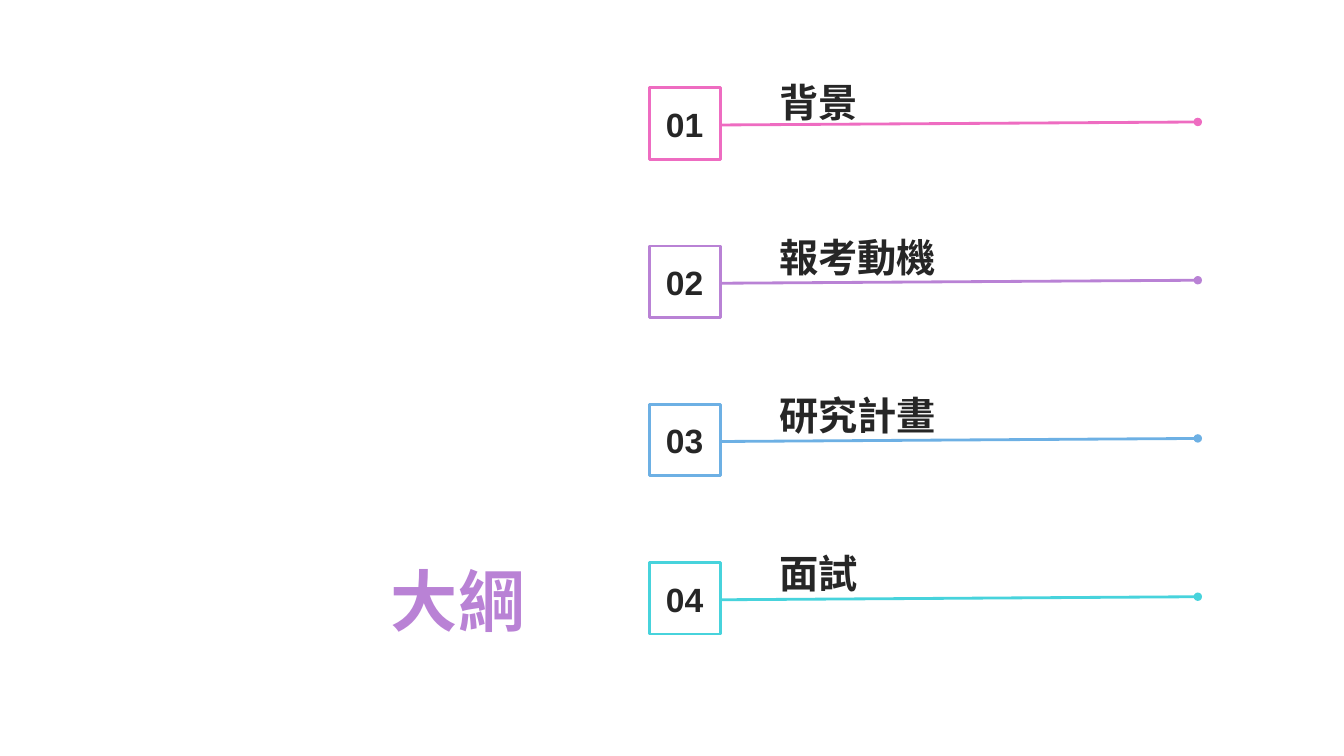
from lxml import etree
from pptx import Presentation
from pptx.dml.color import RGBColor
from pptx.enum.shapes import MSO_CONNECTOR as Connector, MSO_SHAPE as Shape
from pptx.enum.text import MSO_ANCHOR as Anchor, MSO_AUTO_SIZE as AutoSize, PP_ALIGN as Align
from pptx.oxml.ns import qn
from pptx.util import Inches, Pt

PINK = RGBColor(0xEE, 0x6C, 0xC1)
PURPLE = RGBColor(0xB9, 0x82, 0xD5)
BLUE = RGBColor(0x6D, 0xB0, 0xE4)
TEAL = RGBColor(0x47, 0xD3, 0xDC)
DARK = RGBColor(0x26, 0x26, 0x26)
WHITE = RGBColor(0xFF, 0xFF, 0xFF)

TITLE = "大綱"
# heading, colour, top of the heading
TOPICS = [
    ("背景", PINK, 0.73),
    ("報考動機", PURPLE, 2.27),
    ("研究計畫", BLUE, 3.83),
    ("面試", TEAL, 5.4),
]

FONT = {"name": "Arial", "bold": True}
NARROW = {"margin_left": Inches(0.12), "margin_right": Inches(0.12)}
FIRST_TOP, ROW_STEP = 0.87, 1.57
SQUARE_LEFT, SQUARE_SIZE = 6.44, 0.71
LINE_END, LINE_RISE = 11.88, 0.03
LINE_WIDTH = Pt(2)


def set_all(target, values):
    for name, value in values.items():
        setattr(target, name, value)


def add_text(page, text, place, size, color, align=Align.LEFT, frame_format=NARROW):
    box = page.shapes.add_textbox(*map(Inches, place))
    frame = box.text_frame
    set_all(frame, {"word_wrap": True, "auto_size": AutoSize.SHAPE_TO_FIT_TEXT, **frame_format})
    para = frame.paragraphs[0]
    para.alignment = align
    span = para.add_run()
    span.text = text
    set_all(span.font, {**FONT, "size": Pt(size)})
    span.font.color.rgb = color


def add_dotted_line(page, start, end, color):
    """Draw a line that ends in a round dot."""
    line = page.shapes.add_connector(Connector.STRAIGHT, *map(Inches, start + end))
    line.line.color.rgb = color
    line.line.width = LINE_WIDTH
    etree.SubElement(line.line._get_or_add_ln(), qn("a:tailEnd"), type="oval")
    etree.SubElement(line._element.spPr, qn("a:effectLst"))


def add_square(page, top, color):
    square = page.shapes.add_shape(
        Shape.RECTANGLE, *map(Inches, (SQUARE_LEFT, top, SQUARE_SIZE, SQUARE_SIZE)))
    square.shadow.inherit = False
    square.fill.solid()
    square.fill.fore_color.rgb = WHITE
    square.line.color.rgb = color
    square.line.width = LINE_WIDTH


def main():
    deck = Presentation()
    set_all(deck, {"slide_width": Inches(13.33), "slide_height": Inches(7.5)})
    page = deck.slides.add_slide(deck.slide_layouts[6])

    add_text(page, TITLE, (1.15, 5.49, 4.16, 0.91), 48, PURPLE, Align.RIGHT,
             {"vertical_anchor": Anchor.MIDDLE})

    for index, (heading, color, heading_top) in enumerate(TOPICS):
        top = FIRST_TOP + index * ROW_STEP
        line_start = (SQUARE_LEFT + SQUARE_SIZE, top + 0.37)
        add_text(page, heading, (7.61, heading_top, 3.82, 0.57), 28, DARK)
        add_dotted_line(page, line_start, (LINE_END, line_start[1] - LINE_RISE), color)
        add_square(page, top, color)
        add_text(page, f"{index + 1:02}", (SQUARE_LEFT + 0.04, top + 0.11, 0.62, 0.5),
                 24, DARK, Align.CENTER)

    deck.save("out.pptx")


if __name__ == "__main__":
    main()
